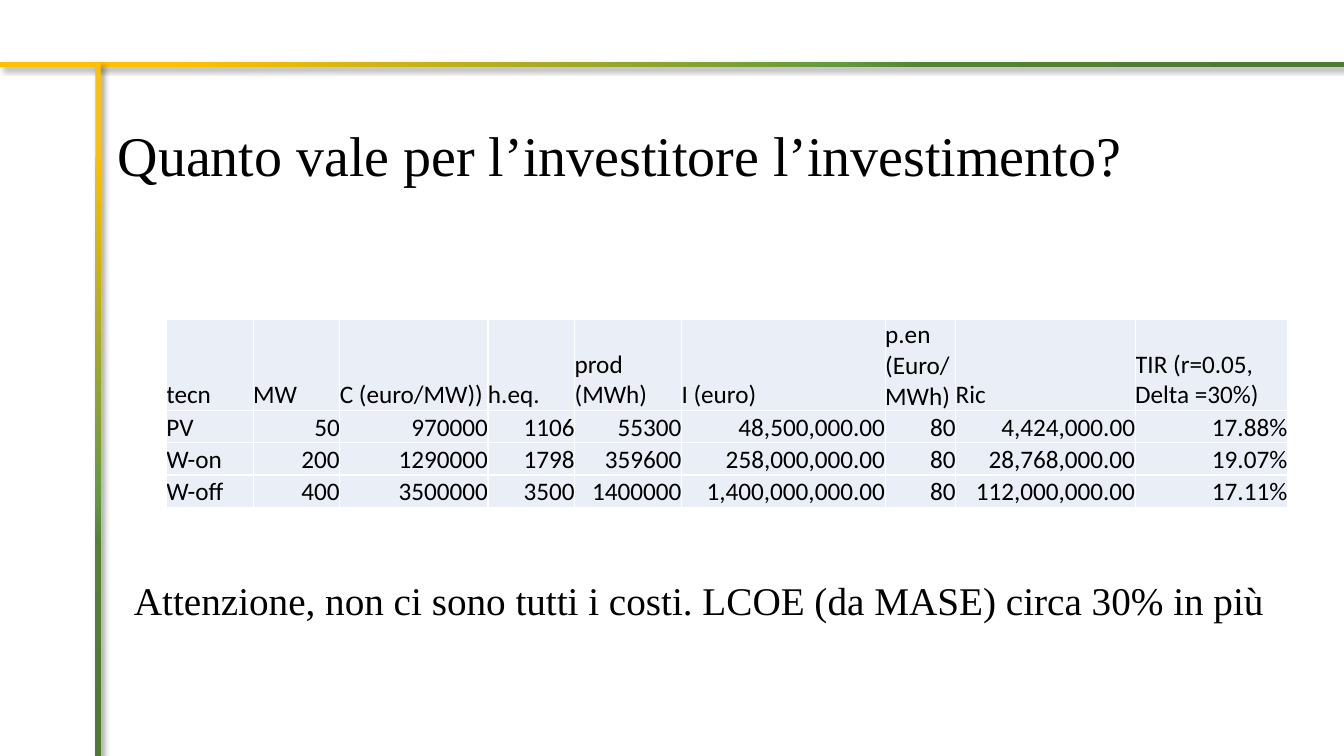
from dataclasses import dataclass

from lxml.etree import SubElement
from pptx import Presentation
from pptx.dml.color import RGBColor as RGB
from pptx.enum.shapes import MSO_SHAPE as SHAPE
from pptx.enum.text import MSO_ANCHOR as ANCHOR, PP_ALIGN as ALIGN
from pptx.oxml import parse_xml
from pptx.oxml.ns import nsdecls, qn
from pptx.util import Inches, Pt


@dataclass(frozen=True)
class Theme:
    text: str = "000000"
    cell: str = "EAEFF7"
    border: str = "FFFFFF"
    stops: tuple = ((13, "FFC000"), (62, "649A3F"), (69, "548235"), (97, "4E7932"))
    serif: str = "Times New Roman"
    sans: str = "Calibri"
    title_size: int = 40
    note_size: int = 28
    cell_size: int = 18


THEME = Theme()
WIDTH, HEIGHT = Inches(13.33), Inches(7.5)
COLUMNS = (0.86, 0.86, 1.47, 0.86, 1.06, 2.02, 0.7, 1.78, 1.51)
ROWS = (0.87, 0.32, 0.32, 0.32)
DATA = (
    ("tecn", "MW", "C (euro/MW))", "h.eq.", "prod (MWh)", "I (euro)",
     "p.en (Euro/MWh)", "Ric", "TIR (r=0.05, Delta =30%)"),
    ("PV", "50", "970000", "1106", "55300", "48,500,000.00",
     "80", "4,424,000.00", "17.88%"),
    ("W-on", "200", "1290000", "1798", "359600", "258,000,000.00",
     "80", "28,768,000.00", "19.07%"),
    ("W-off", "400", "3500000", "3500", "1400000", "1,400,000,000.00",
     "80", "112,000,000.00", "17.11%"),
)


def place(left, top, width, height):
    return [round(share * side / 100) for share, side in
            zip((left, top, width, height), (WIDTH, HEIGHT) * 2)]


def write(p, text, font, size, align):
    p.text = text
    p.alignment = align
    p.font.name = font
    p.font.size = Pt(size)
    p.font.color.rgb = RGB.from_string(THEME.text)


def add_bar(s, box, angle):
    sp = s.shapes.add_shape(SHAPE.RECTANGLE, *place(*box))
    sp.line.fill.background()
    sp.fill.gradient()
    sp.fill.gradient_angle = angle
    stops = sp._element.spPr.find(qn("a:gradFill")).find(qn("a:gsLst"))
    stops.clear()
    for share, color in THEME.stops:
        stop = SubElement(stops, qn("a:gs"), pos=str(share * 1000))
        SubElement(stop, qn("a:srgbClr"), val=color)
    sp._element.spPr.append(parse_xml(
        f'<a:effectLst {nsdecls("a")}><a:outerShdw blurRad="{Pt(4)}" dist="{Pt(3)}" '
        'dir="2700000" algn="tl" rotWithShape="0"><a:srgbClr val="000000">'
        '<a:alpha val="40000"/></a:srgbClr></a:outerShdw></a:effectLst>'))


def add_line_of_text(s, box, text, size):
    tf = s.shapes.add_textbox(*place(*box)).text_frame
    tf.word_wrap = True
    write(tf.paragraphs[0], text, THEME.serif, size, ALIGN.JUSTIFY)


def style_cell(cell, text, align):
    cell.margin_left = cell.margin_right = cell.margin_top = cell.margin_bottom = 0
    cell.vertical_anchor = ANCHOR.BOTTOM
    write(cell.text_frame.paragraphs[0], text, THEME.sans, THEME.cell_size, align)
    props = cell._tc.get_or_add_tcPr()
    for side in ("lnL", "lnR", "lnT", "lnB"):
        line = SubElement(props, qn(f"a:{side}"), w=str(Pt(1)))
        SubElement(SubElement(line, qn("a:solidFill")), qn("a:srgbClr"), val=THEME.border)
    cell.fill.solid()
    cell.fill.fore_color.rgb = RGB.from_string(THEME.cell)


def add_data_table(s, left, top):
    box = place(left, top, 0, 0)[:2] + [Inches(sum(COLUMNS)), Inches(sum(ROWS))]
    table = s.shapes.add_table(len(ROWS), len(COLUMNS), *box).table
    table.first_row = table.horz_banding = False
    for column, width in zip(table.columns, COLUMNS):
        column.width = Inches(width)
    for row, height in zip(table.rows, ROWS):
        row.height = Inches(height)
    for i, values in enumerate(DATA):
        for j, value in enumerate(values):
            style_cell(table.cell(i, j), value, ALIGN.RIGHT if i and j else ALIGN.LEFT)


def main():
    prs = Presentation()
    prs.slide_width, prs.slide_height = WIDTH, HEIGHT
    s = prs.slides.add_slide(prs.slide_layouts[6])
    add_bar(s, (0, 8.25, 100, 0.6), 0)
    add_bar(s, (7.1, 8.4, 0.38, 92), 270)
    add_line_of_text(s, (8.03, 15.3, 83.95, 10.3),
                     "Quanto vale per l’investitore l’investimento?", THEME.title_size)
    add_data_table(s, 12.38, 42.3)
    add_line_of_text(s, (9.23, 75.6, 86.2, 7.6),
                     "Attenzione, non ci sono tutti i costi. LCOE (da MASE) circa 30% in più",
                     THEME.note_size)
    prs.save("out.pptx")


if __name__ == "__main__":
    main()
